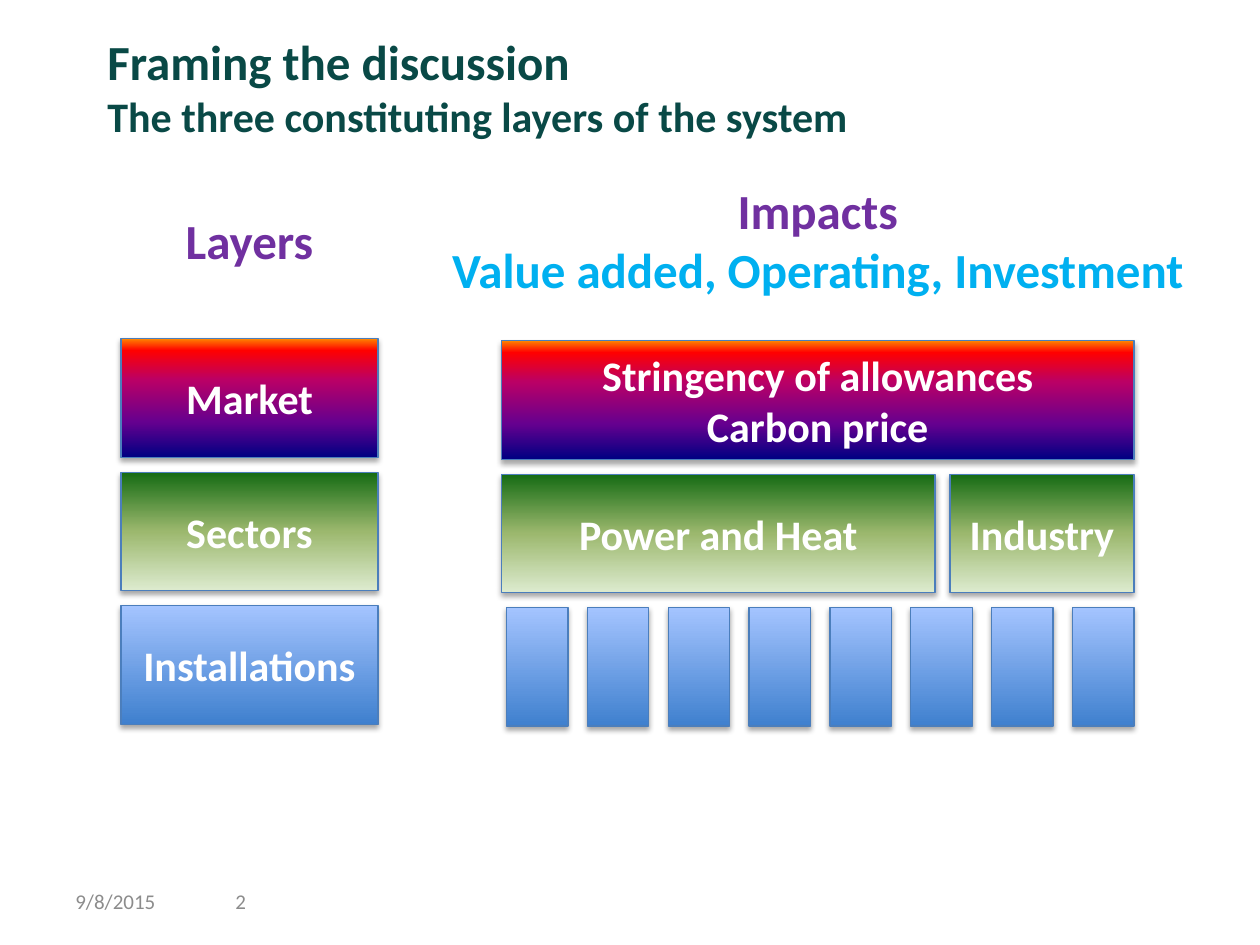
from lxml.etree import SubElement
from pptx import Presentation
from pptx.dml.color import RGBColor
from pptx.enum.shapes import MSO_SHAPE
from pptx.enum.text import MSO_ANCHOR, PP_ALIGN
from pptx.oxml.ns import qn
from pptx.util import Cm, Pt

FONT = "Calibri"
WHITE = RGBColor(0xFF, 0xFF, 0xFF)
BLACK = RGBColor(0x00, 0x00, 0x00)
GREY = RGBColor(0x8C, 0x8C, 0x8C)
DARK_TEAL = RGBColor(0x09, 0x49, 0x46)
PURPLE = RGBColor(0x70, 0x30, 0xA0)
SKY_BLUE = RGBColor(0x00, 0xB0, 0xF0)
OUTLINE = RGBColor(0x4B, 0x7E, 0xBC)

# Gradient stops run from the bottom of a box to its top.
MARKET_STOPS = (
    (0, RGBColor(0x00, 0x00, 0x82)),
    (30, RGBColor(0x66, 0x00, 0x8F)),
    (65, RGBColor(0xBA, 0x00, 0x66)),
    (90, RGBColor(0xFF, 0x00, 0x00)),
    (100, RGBColor(0xFF, 0x82, 0x00)),
)
SECTOR_STOPS = (
    (0, RGBColor(0xDD, 0xEB, 0xCF)),
    (50, RGBColor(0x9C, 0xB8, 0x6E)),
    (100, RGBColor(0x15, 0x6B, 0x13)),
)
INSTALLATION_STOPS = (
    (0, RGBColor(0x3F, 0x80, 0xCE)),
    (100, RGBColor(0xA4, 0xC4, 0xFF)),
)

LAYER_LEFT, LAYER_WIDTH = 2.44, 5.18
IMPACT_LEFT, IMPACT_WIDTH = 10.11, 12.75
IMPACT_DROP = 0.04  # the impact boxes sit slightly below the layer boxes
ROWS_TOP, ROW_HEIGHT, ROW_PITCH = 6.83, 2.39, 2.69
SECTOR_GAP = 0.3
POWER_WIDTH = 8.74
INSTALLATION_COUNT, INSTALLATION_WIDTH, INSTALLATION_INSET = 8, 1.24, 0.1


def write_text(shape, text, styles, align=PP_ALIGN.LEFT, anchor=MSO_ANCHOR.TOP, bold=True):
    """Write one paragraph; styles holds a (size, colour) pair for each line."""
    frame = shape.text_frame
    frame.word_wrap = True
    frame.vertical_anchor = anchor
    paragraph = frame.paragraphs[0]
    paragraph.text = text
    paragraph.alignment = align
    for run, (size, color) in zip(paragraph.runs, styles):
        run.font.name = FONT
        run.font.size = Pt(size)
        run.font.bold = bold
        run.font.color.rgb = color


def add_label(slide, box, text, styles, **options):
    label = slide.shapes.add_textbox(*map(Cm, box))
    write_text(label, text, styles, **options)


def fill_gradient(shape, stops):
    shape.fill.gradient()
    shape.fill.gradient_angle = 90
    stop_list = shape._element.spPr.find(".//" + qn("a:gsLst"))
    stop_list.clear()
    for percent, color in stops:
        stop = SubElement(stop_list, qn("a:gs"), pos=str(percent * 1000))
        SubElement(stop, qn("a:srgbClr"), val=str(color))


def add_drop_shadow(shape):
    shape.shadow.inherit = False
    effects = shape._element.spPr.find(qn("a:effectLst"))
    shadow = SubElement(effects, qn("a:outerShdw"), blurRad=str(Pt(3.1)),
                        dist=str(Pt(1.8)), dir="5400000", rotWithShape="0")
    color = SubElement(shadow, qn("a:srgbClr"), val=str(BLACK))
    SubElement(color, qn("a:alpha"), val="35000")


def add_box(group, box, stops, text=""):
    shape = group.shapes.add_shape(MSO_SHAPE.RECTANGLE, *map(Cm, box))
    fill_gradient(shape, stops)
    shape.line.color.rgb = OUTLINE
    shape.line.width = Pt(0.75)
    add_drop_shadow(shape)
    if text:
        write_text(shape, text, [(24, WHITE)] * 2, PP_ALIGN.CENTER, MSO_ANCHOR.MIDDLE)


def add_layer_row(slide, top, name, stops, impacts):
    """Add a layer box and its impacts, given as (offset, width, text)."""
    group = slide.shapes.add_group_shape()
    add_box(group, (LAYER_LEFT, top, LAYER_WIDTH, ROW_HEIGHT), stops, name)
    for offset, width, text in impacts:
        box = (IMPACT_LEFT + offset, top + IMPACT_DROP, width, ROW_HEIGHT)
        add_box(group, box, stops, text)


def add_layers(slide, top):
    industry_offset = POWER_WIDTH + SECTOR_GAP
    pitch = ((IMPACT_WIDTH - INSTALLATION_INSET - INSTALLATION_WIDTH)
             / (INSTALLATION_COUNT - 1))
    rows = (
        ("Market", MARKET_STOPS,
         [(0, IMPACT_WIDTH, "Stringency of allowances\vCarbon price")]),
        ("Sectors", SECTOR_STOPS,
         [(0, POWER_WIDTH, "Power and Heat"),
          (industry_offset, IMPACT_WIDTH - industry_offset, "Industry")]),
        ("Installations", INSTALLATION_STOPS,
         [(INSTALLATION_INSET + i * pitch, INSTALLATION_WIDTH, "")
          for i in range(INSTALLATION_COUNT)]),
    )
    for index, row in enumerate(rows):
        add_layer_row(slide, top + index * ROW_PITCH, *row)


def place_title(slide, box):
    title = slide.shapes.title
    title.left, title.top, title.width, title.height = map(Cm, box)
    write_text(title, "Framing the discussion\vThe three constituting layers of the system",
               [(28, DARK_TEAL), (24, DARK_TEAL)])


def add_headings(slide):
    add_label(slide, (3.2, 4.11, 3.66, 1.45), "Layers", [(28, PURPLE)],
              align=PP_ALIGN.CENTER)
    add_label(slide, (8.56, 3.51, 15.85, 2.64),
              "Impacts\vValue added, Operating, Investment",
              [(28, PURPLE), (28, SKY_BLUE)], align=PP_ALIGN.CENTER)


def add_footer(slide, left, top):
    height, date_width = 1.02, 2.67
    options = {"anchor": MSO_ANCHOR.MIDDLE, "bold": False}
    add_label(slide, (left, top, date_width, height), "9/8/2015", [(12, GREY)], **options)
    add_label(slide, (left + date_width, top, 1.27, height), "2", [(12, GREY)],
              align=PP_ALIGN.RIGHT, **options)


def main():
    presentation = Presentation()
    presentation.slide_width, presentation.slide_height = Cm(25.4), Cm(19.05)
    slide = presentation.slides.add_slide(presentation.slide_layouts[5])
    add_footer(slide, 1.27, 17.65)
    place_title(slide, (1.91, 0.51, 21.59, 2.49))
    add_layers(slide, ROWS_TOP)
    add_headings(slide)
    presentation.save("out.pptx")


if __name__ == "__main__":
    main()
